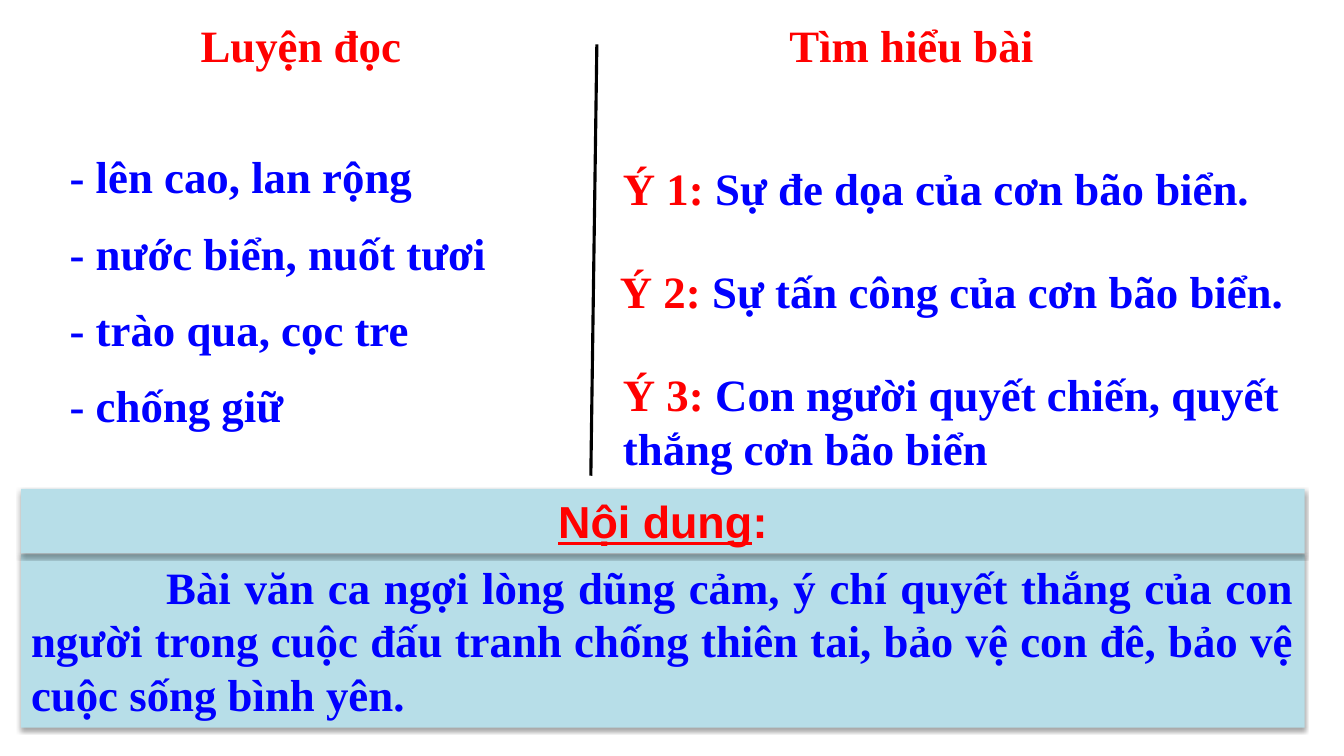
import pptx
import pptx.dml.color
import pptx.enum.shapes
import pptx.enum.text
import pptx.oxml
import pptx.oxml.ns
import pptx.util
from lxml import etree
from pptx.util import Inches

COLORS = {"red": "FF0000", "blue": "0000FF", "band": "B7DEE8", "line": "000000"}
ALIGN = pptx.enum.text.PP_ALIGN
SHADOW = (
    '<a:outerShdw xmlns:a="http://schemas.openxmlformats.org/drawingml/2006/main" '
    'blurRad="39370" dist="22860" dir="5400000" rotWithShape="0">'
    '<a:srgbClr val="000000"><a:alpha val="35000"/></a:srgbClr></a:outerShdw>'
)


def rgb(name):
    return pptx.dml.color.RGBColor.from_string(COLORS[name])


def add_run(paragraph, text, color="blue", font="Times New Roman", underline=False):
    run = paragraph.add_run()
    run.text = text
    run.font.name = font
    run.font.size = pptx.util.Pt(32)
    run.font.bold = True
    run.font.underline = underline
    run.font.color.rgb = rgb(color)


def fill_frame(frame, paragraphs, align=ALIGN.LEFT, inset=(0.1, 0.05), gap=0):
    frame.word_wrap = True
    frame.vertical_anchor = pptx.enum.text.MSO_ANCHOR.TOP
    frame.margin_left = frame.margin_right = Inches(inset[0])
    frame.margin_top = frame.margin_bottom = Inches(inset[1])
    for index, runs in enumerate(paragraphs):
        paragraph = frame.add_paragraph() if index else frame.paragraphs[0]
        paragraph.alignment = align
        if index:
            paragraph.space_before = pptx.util.Pt(gap)
        for text, style in runs:
            add_run(paragraph, text, **style)


def add_text(slide, box, paragraphs, **style):
    shape = slide.shapes.add_textbox(*map(Inches, box))
    fill_frame(shape.text_frame, paragraphs, **style)


def add_band(slide, top, height, runs, align):
    shape = slide.shapes.add_shape(
        pptx.enum.shapes.MSO_SHAPE.RECTANGLE,
        Inches(0.21), Inches(top), Inches(12.73), Inches(height))
    shape.fill.solid()
    shape.fill.fore_color.rgb = rgb("band")
    shape.line.fill.background()
    shape.shadow.inherit = False
    effects = shape._element.spPr.find(pptx.oxml.ns.qn("a:effectLst"))
    effects.append(pptx.oxml.parse_xml(SHADOW))
    fill_frame(shape.text_frame, [runs], align=align)
    return shape


def add_divider(slide):
    divider = slide.shapes.add_connector(
        pptx.enum.shapes.MSO_CONNECTOR.STRAIGHT,
        Inches(5.92), Inches(0.44), Inches(5.86), Inches(4.72))
    divider.line.color.rgb = rgb("line")
    divider.line.width = pptx.util.Pt(2.25)
    etree.SubElement(divider._element.spPr, pptx.oxml.ns.qn("a:effectLst"))


def main():
    presentation = pptx.Presentation()
    presentation.slide_width = Inches(13.33)
    presentation.slide_height = Inches(7.5)
    slide = presentation.slides.add_slide(presentation.slide_layouts[6])
    red = {"color": "red"}

    add_divider(slide)
    for left, width, heading in ((1.89, 3.91, "Luyện đọc"), (7.73, 3.58, "Tìm hiểu bài")):
        add_text(slide, (left, 0.13, width, 0.64), [[(heading, red)]])

    ideas = (
        (6.08, 0.64, "Sự đe dọa của cơn bão biển."),
        (6.05, 0.64, "Sự tấn công của cơn bão biển."),
        (6.08, 1.18, "Con người quyết chiến, quyết thắng cơn bão biển"),
    )
    for index, (left, height, idea) in enumerate(ideas):
        add_text(slide, (left, 1.55 + 1.02 * index, 6.98, height),
                 [[(f"Ý {index + 1}: ", red), (idea, {})]])

    summary = add_band(slide, 5.5, 1.72, [(
        "Bài văn ca ngợi lòng dũng cảm, ý chí quyết thắng của con người trong cuộc "
        "đấu tranh chống thiên tai, bảo vệ con đê, bảo vệ cuộc sống bình yên.", {})],
        ALIGN.JUSTIFY)
    properties = summary.text_frame.paragraphs[0]._p.get_or_add_pPr()
    properties.set("indent", str(Inches(1.34)))

    phrases = ("lên cao, lan rộng", "nước biển, nuốt tươi", "trào qua, cọc tre", "chống giữ")
    add_text(slide, (0.57, 1.42, 5.12, 3.08),
             [[(f"- {phrase}", {})] for phrase in phrases], inset=(0.12, 0.06), gap=16)

    add_band(slide, 4.85, 0.64, [
        ("Nội dung", {"color": "red", "font": "Arial", "underline": True}),
        (":", {"color": "red", "font": "Arial"})], ALIGN.CENTER)

    presentation.save("out.pptx")


if __name__ == "__main__":
    main()
